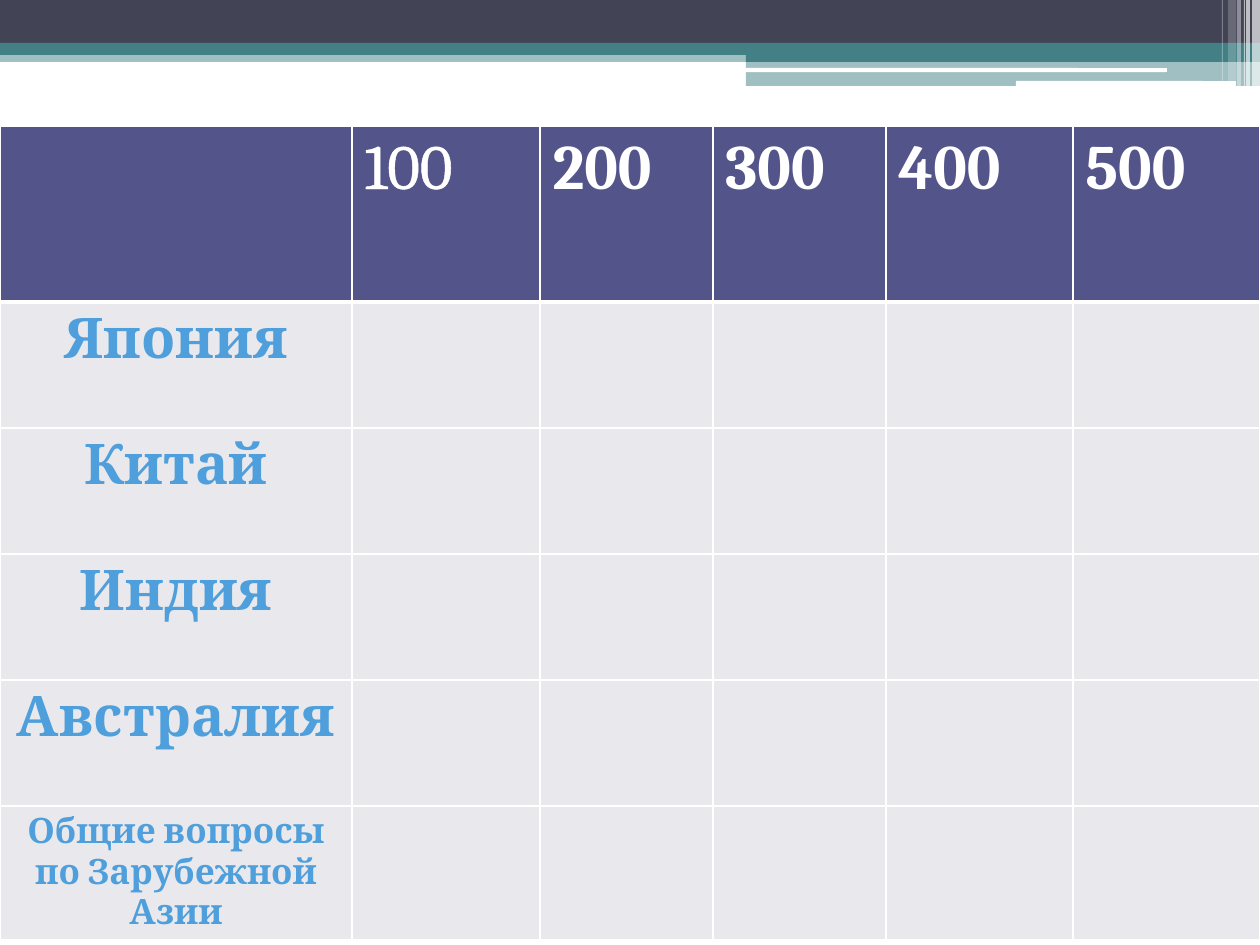
from collections import namedtuple
from dataclasses import dataclass

from lxml.etree import SubElement
from pptx import Presentation
from pptx.dml.color import RGBColor
from pptx.enum.shapes import MSO_SHAPE as SHAPE
from pptx.enum.text import PP_ALIGN as ALIGN
from pptx.oxml import parse_xml
from pptx.oxml.ns import nsdecls, qn
from pptx.util import Emu, Pt

PX_PER_INCH = 126
Box = namedtuple("Box", "x y w h")


@dataclass(frozen=True)
class Theme:
    font: str = "Cambria"
    dark: str = "424456"
    teal: str = "438086"
    white: str = "FFFFFF"
    head: str = "53548A"
    body: str = "E9E9ED"
    label_stops: tuple = ((0, "184D70"), (78, "4E9FDB"), (100, "EFF5FB"))
    price_size: int = 36
    topic_size: int = 32
    small_size: int = 20


THEME = Theme()
PRICES = ["100", "200", "300", "400", "500"]
TOPICS = ["Япония", "Китай", "Индия", "Австралия", "Общие вопросы по Зарубежной Азии"]


def px(n):
    return Emu(round(n * 914400 / PX_PER_INCH))


def add_bar(slide, box, color, alpha=100, kind=SHAPE.RECTANGLE):
    s = slide.shapes.add_shape(kind, *map(px, box))
    s.shadow.inherit = False
    s.fill.solid()
    s.fill.fore_color.rgb = RGBColor.from_string(color)
    s.line.fill.background()
    if alpha < 100:
        clr = s.fill._xPr.find(".//" + qn("a:srgbClr"))
        SubElement(clr, qn("a:alpha"), val=str(alpha * 1000))
    return s


def add_banner(slide, box):
    """Stacked bands, two white slits and the fading stripes at the right edge."""
    x, y, w, h = box
    step = 746
    bands = [
        (0, 50, 12, THEME.teal, 50),
        (0, 0, 43, THEME.dark, 100),
        (0, 43, 12, THEME.teal, 100),
        (step, 49, 13, THEME.teal, 100),
        (step, 61, 25, THEME.teal, 50),
    ]
    for left, top, height, color, alpha in bands:
        add_bar(slide, Box(x + left, y + top, w - left, height), color, alpha)

    for left, top, width, height in [(745, 68, 422, 4), (1016, 81, 220, 5)]:
        add_bar(slide, Box(x + left, y + top, width, height), THEME.white,
                kind=SHAPE.ROUNDED_RECTANGLE)

    stripes = [(8, 8, h, 65), (14, 4, h, 65), (16, 1, h, 60),
               (23, 4, h, 40), (32, 8, h - 5, 20), (38, 1, h - 5, 30)]
    for from_right, width, height, alpha in stripes:
        add_bar(slide, Box(x + w - from_right, y, width, height), THEME.white, alpha)


def style_cell(cell, color, top=1, bottom=1):
    """Fill the cell and draw white borders; widths are in points."""
    cell.fill.solid()
    cell.fill.fore_color.rgb = RGBColor.from_string(color)
    tc_pr = cell._tc.get_or_add_tcPr()
    for i, (side, width) in enumerate(zip("LRTB", (1, 1, top, bottom))):
        tc_pr.insert(i, parse_xml(
            f'<a:ln{side} {nsdecls("a")} w="{Pt(width)}"><a:solidFill>'
            f'<a:srgbClr val="{THEME.white}"/></a:solidFill></a:ln{side}>'))


def add_text(cell, text, size, bold=True):
    p = cell.text_frame.paragraphs[0]
    r = p.add_run()
    r.text = text
    r.font.name = THEME.font
    r.font.size = Pt(size)
    r.font.bold = bold
    return p, r


def write_price(cell, price, outlined):
    _, r = add_text(cell, price, THEME.price_size, bold=not outlined)
    white = RGBColor.from_string(THEME.white)
    r.font.color.rgb = white
    if outlined:
        r._r.get_or_add_rPr().insert(0, parse_xml(
            f'<a:ln {nsdecls("a")} w="{Pt(1.45)}"><a:solidFill>'
            f'<a:srgbClr val="{white}"/></a:solidFill></a:ln>'))


def write_topic(cell, topic, size):
    p, r = add_text(cell, topic, size)
    p.alignment = ALIGN.CENTER
    stops = "".join(f'<a:gs pos="{pos * 1000}"><a:srgbClr val="{color}"/></a:gs>'
                    for pos, color in THEME.label_stops)
    r._r.get_or_add_rPr().insert(0, parse_xml(
        f'<a:gradFill {nsdecls("a")}><a:gsLst>{stops}</a:gsLst>'
        '<a:lin ang="5400000"/></a:gradFill>'))


def add_board(slide, box):
    """Quiz table: one row per topic, one column per price."""
    widths = [352, 188, 173, 173, 187, 187]
    heights = [176] + [126] * len(TOPICS)
    table = slide.shapes.add_table(len(heights), len(widths), *map(px, box)).table
    for col, width in zip(table.columns, widths):
        col.width = px(width)
    for i, (row, height) in enumerate(zip(table.rows, heights)):
        row.height = px(height)
        for cell in row.cells:
            if i == 0:
                style_cell(cell, THEME.head, bottom=3)
            else:
                style_cell(cell, THEME.body, top=3 if i == 1 else 1)

    for i, price in enumerate(PRICES):
        write_price(table.cell(0, i + 1), price, outlined=i == 0)
    for i, topic in enumerate(TOPICS, 1):
        last = i == len(TOPICS)
        write_topic(table.cell(i, 0), topic,
                    THEME.small_size if last else THEME.topic_size)


def main():
    prs = Presentation()
    prs.slide_width, prs.slide_height = px(1260), px(945)
    slide = prs.slides.add_slide(prs.slide_layouts[6])
    add_banner(slide, Box(0, 0, 1260, 86))
    add_board(slide, Box(0, 126, 1260, 806))
    prs.save("out.pptx")


if __name__ == "__main__":
    main()
